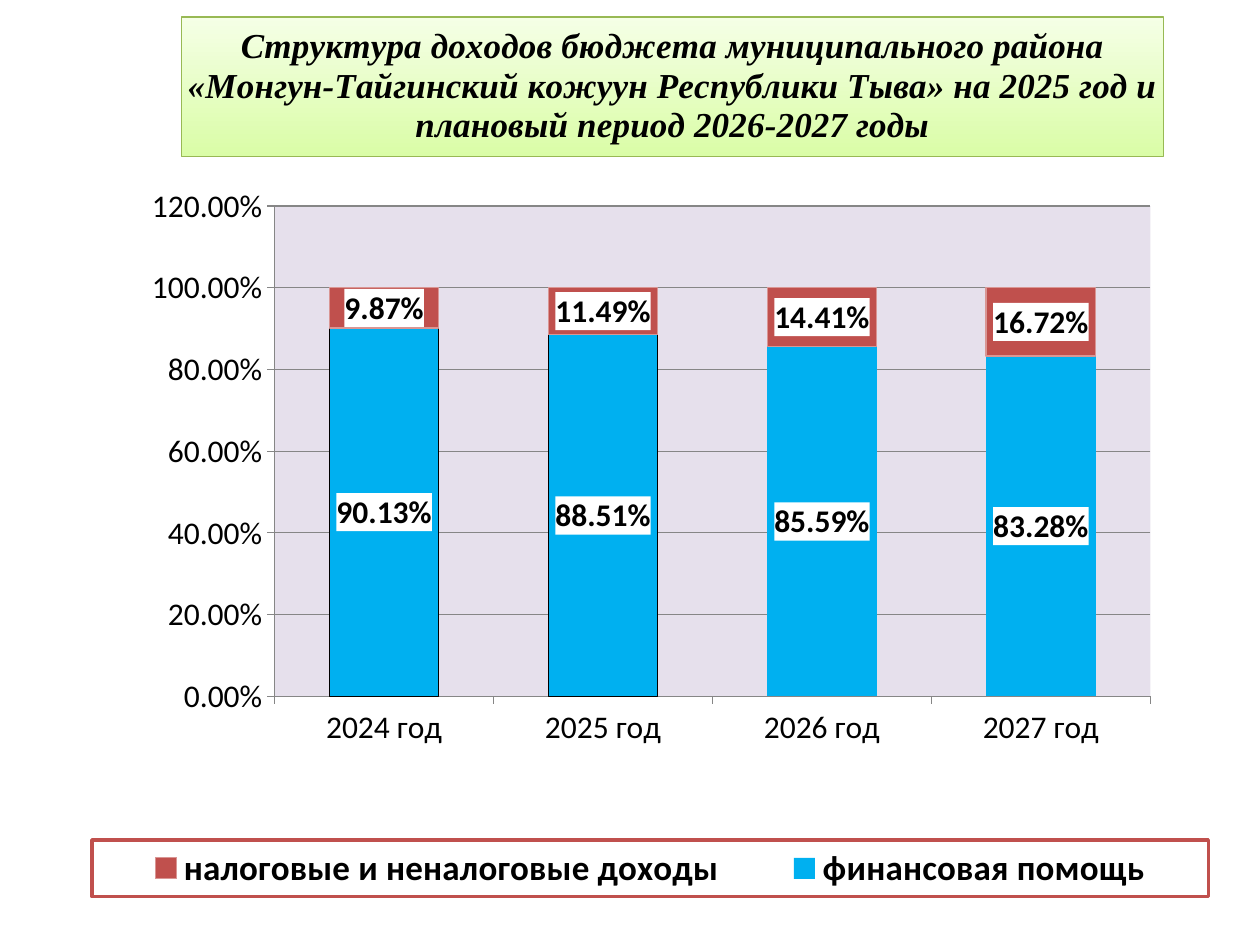
from lxml.etree import SubElement
from pptx import Presentation
from pptx.chart.data import CategoryChartData
from pptx.dml.color import RGBColor
from pptx.enum.chart import XL_CHART_TYPE, XL_LABEL_POSITION, XL_LEGEND_POSITION, XL_TICK_MARK
from pptx.oxml import parse_xml
from pptx.oxml.ns import nsdecls, qn
from pptx.util import Cm, Pt

YEARS = ["2024 год", "2025 год", "2026 год", "2027 год"]
INCOME = [
    ("финансовая помощь", [0.9013, 0.8851, 0.8559, 0.8328], "00B0F0"),
    ("налоговые и неналоговые доходы", [0.0987, 0.1149, 0.1441, 0.1672], "C0504D"),
]
HEADING = (
    "Структура доходов бюджета муниципального района «Монгун-Тайгинский кожуун "
    "Республики Тыва» на 2025 год и плановый период 2026-2027 годы"
)
PERCENT = "0.00%"
GREY = "868686"


def color(value):
    """Return the colour for a hex string."""
    return RGBColor.from_string(value)


def set_font(font, size, bold=False, name="Calibri"):
    """Set a black font of the given size."""
    font.name, font.size, font.bold = name, Pt(size), bold
    font.color.rgb = color("000000")


def set_line(line, value, width=0.75):
    """Set the colour and width of a line."""
    line.color.rgb = color(value)
    line.width = Pt(width)


def solid_properties(fill, outline=None, width=0.75):
    """Return chart shape properties with a solid fill and optional outline."""
    paint = '<a:solidFill><a:srgbClr val="{}"/></a:solidFill>'
    stroke = paint.format(outline) if outline else "<a:noFill/>"
    return parse_xml(
        f'<c:spPr {nsdecls("c", "a")}>{paint.format(fill)}'
        f'<a:ln w="{Pt(width)}">{stroke}</a:ln></c:spPr>'
    )


def place(element, index, inner=False, **fractions):
    """Give a chart part a manual layout in fractions of the chart."""
    for old in element.findall(qn("c:layout")):
        element.remove(old)
    layout = parse_xml(f'<c:layout {nsdecls("c")}><c:manualLayout/></c:layout>')
    settings = {"layoutTarget": "inner"} if inner else {}
    settings.update(xMode="edge", yMode="edge", **fractions)
    for tag, value in settings.items():
        SubElement(layout[0], qn(f"c:{tag}")).set("val", str(value))
    element.insert(index, layout)


def add_heading(chart):
    """Add the heading on its green gradient."""
    chart.has_title = True
    title = chart.chart_title
    run = title.text_frame.paragraphs[0].add_run()
    run.text = HEADING
    set_font(run.font, 20, True, "Times New Roman")
    run.font.italic = True
    fill = title.format.fill
    fill.gradient()
    fill.gradient_angle = 270
    for stop, shade in zip(fill.gradient_stops, ("F5FFE6", "DAFDA7")):
        stop.color.rgb = color(shade)
    set_line(title.format.line, "98B954")
    place(title._element, 1, x=0.144, y=0.018)


def style_axes(chart):
    """Style both axes and the gridlines."""
    for axis in (chart.category_axis, chart.value_axis):
        axis.major_tick_mark = XL_TICK_MARK.OUTSIDE
        axis.minor_tick_mark = XL_TICK_MARK.NONE
        set_line(axis.format.line, GREY)
        set_font(axis.tick_labels.font, 18)
    shares = chart.value_axis
    shares.minimum_scale, shares.maximum_scale, shares.major_unit = 0, 1.2, 0.2
    shares.tick_labels.number_format = PERCENT
    shares.tick_labels.number_format_is_linked = False
    shares.has_major_gridlines = True
    set_line(shares.major_gridlines.format.line, GREY)


def style_series(series, fill):
    """Fill a series and label it with bold shares on white."""
    series.format.fill.solid()
    series.format.fill.fore_color.rgb = color(fill)
    labels = series.data_labels
    labels.show_value = True
    labels.number_format = PERCENT
    labels.number_format_is_linked = False
    labels.position = XL_LABEL_POSITION.CENTER
    set_font(labels.font, 18, True)
    labels._element.find(qn("c:txPr")).addprevious(solid_properties("FFFFFF"))


def add_legend(chart):
    """Add the framed legend below the columns."""
    chart.has_legend = True
    legend = chart.legend
    legend.position = XL_LEGEND_POSITION.RIGHT
    legend.include_in_layout = False
    set_font(legend.font, 20, True)
    legend._element.find(qn("c:txPr")).addprevious(solid_properties("FFFFFF", "C0504D", 2))
    place(legend._element, 1, x=0.073, y=0.889, w=0.886, h=0.06)


def add_income_chart(slide, width, height):
    """Add the stacked chart of income shares."""
    data = CategoryChartData(number_format=PERCENT)
    data.categories = YEARS
    for name, shares, _ in INCOME:
        data.add_series(name, shares)
    chart = slide.shapes.add_chart(
        XL_CHART_TYPE.COLUMN_STACKED, 0, 0, width, height, data
    ).chart
    set_font(chart.font, 18)
    add_heading(chart)
    style_axes(chart)
    columns = chart.plots[0]
    columns.gap_width, columns.overlap, columns.vary_by_categories = 100, 100, False
    for series, (_, _, fill) in zip(columns.series, INCOME):
        style_series(series, fill)
    aid, own = columns.series
    set_line(own.format.line, "D99694")
    for year in range(2):
        point = aid.points[year].format
        point.fill.solid()
        point.fill.fore_color.rgb = color(INCOME[0][2])
        set_line(point.line, "000000")
    add_legend(chart)
    area = chart._chartSpace.find(".//" + qn("c:plotArea"))
    place(area, 0, inner=True, x=0.218, y=0.218, w=0.695, h=0.519)
    area.append(solid_properties("E6E0EC"))


def main():
    """Build and save the slide."""
    deck = Presentation()
    deck.slide_width, deck.slide_height = Cm(25.4), Cm(19.05)
    slide = deck.slides.add_slide(deck.slide_layouts[6])
    add_income_chart(slide, deck.slide_width, deck.slide_height)
    deck.save("out.pptx")


if __name__ == "__main__":
    main()
